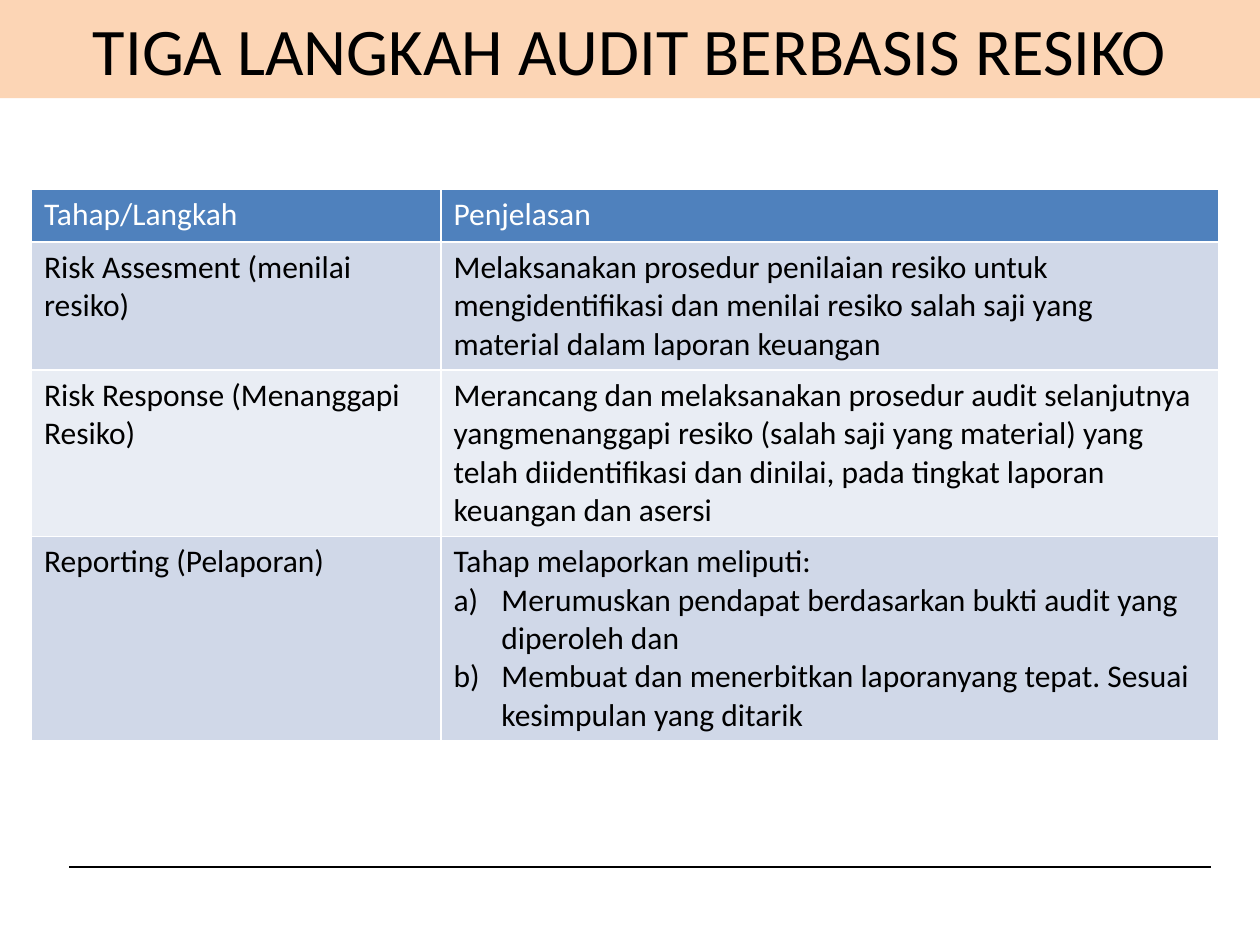
from lxml import etree
from pptx import Presentation
from pptx.dml.color import RGBColor
from pptx.enum.shapes import MSO_CONNECTOR, MSO_SHAPE
from pptx.enum.text import MSO_ANCHOR, PP_ALIGN
from pptx.oxml.ns import qn
from pptx.util import Inches, Pt

RECTANGLE = MSO_SHAPE.RECTANGLE
STRAIGHT = MSO_CONNECTOR.STRAIGHT
MIDDLE = MSO_ANCHOR.MIDDLE
CENTER = PP_ALIGN.CENTER

FONT = "Calibri"
COLORS = {
    "black": "000000",
    "white": "FFFFFF",
    "title": "FCD5B5",
    "header": "4F81BD",
    "odd": "D0D8E8",
    "even": "E9EDF4",
}
COLUMN_WIDTHS = (3.25, 6.17)
ROW_HEIGHT = 0.42

# Each cell is a list of paragraphs; those after the first are lettered.
ROWS = [
    (["Tahap/Langkah"], ["Penjelasan"]),
    (
        ["Risk Assesment (menilai resiko)"],
        ["Melaksanakan prosedur penilaian resiko untuk mengidentifikasi dan "
         "menilai resiko salah saji yang material dalam laporan keuangan"],
    ),
    (
        ["Risk Response (Menanggapi Resiko)"],
        ["Merancang dan melaksanakan prosedur audit selanjutnya "
         "yangmenanggapi resiko (salah saji yang material) yang telah "
         "diidentifikasi dan dinilai, pada tingkat laporan keuangan dan asersi"],
    ),
    (
        ["Reporting (Pelaporan)"],
        ["Tahap melaporkan meliputi:",
         "Merumuskan pendapat berdasarkan bukti audit yang diperoleh dan",
         "Membuat dan menerbitkan laporanyang tepat. Sesuai kesimpulan yang ditarik"],
    ),
]


def rgb(name):
    return RGBColor.from_string(COLORS[name])


def style_para(para, size, color):
    para.font.name = FONT
    para.font.size = Pt(size)
    para.font.color.rgb = rgb(color)


def add_letter(para):
    """Number the paragraph a), b), ... with a hanging indent."""
    props = para._p.get_or_add_pPr()
    props.set("marL", str(Inches(0.38)))
    props.set("indent", str(-Inches(0.38)))
    etree.SubElement(props, qn("a:buFont"), typeface="+mj-lt")
    etree.SubElement(props, qn("a:buAutoNum"), type="alphaLcParenR")


def add_borders(cell):
    """Draw white borders; call before filling, as lines precede the fill."""
    props = cell._tc.get_or_add_tcPr()
    for side in ("lnL", "lnR", "lnT", "lnB"):
        line = etree.SubElement(props, qn(f"a:{side}"), w=str(Pt(1)))
        fill = etree.SubElement(line, qn("a:solidFill"))
        etree.SubElement(fill, qn("a:srgbClr"), val=COLORS["white"])


def add_rule(page):
    rule = page.shapes.add_connector(
        STRAIGHT, Inches(0.55), Inches(6.88), Inches(9.61), Inches(6.88))
    rule.line.color.rgb = rgb("black")
    rule.line.width = Pt(1.5)
    etree.SubElement(rule._element.spPr, qn("a:effectLst"))


def add_title(page, text):
    box = page.shapes.add_shape(RECTANGLE, 0, 0, Inches(10), Inches(0.78))
    box.shadow.inherit = False
    box.fill.solid()
    box.fill.fore_color.rgb = rgb("title")
    box.line.fill.background()
    frame = box.text_frame
    frame.word_wrap = True
    frame.vertical_anchor = MIDDLE
    para = frame.paragraphs[0]
    para.text = text
    para.alignment = CENTER
    style_para(para, 38, "black")


def fill_cell(cell, texts, fill, color):
    add_borders(cell)
    cell.fill.solid()
    cell.fill.fore_color.rgb = rgb(fill)
    frame = cell.text_frame
    for index, text in enumerate(texts):
        para = frame.add_paragraph() if index else frame.paragraphs[0]
        para.text = text
        if index:
            add_letter(para)
        style_para(para, 18, color)


def add_steps_table(page):
    frame = page.shapes.add_table(
        len(ROWS), len(COLUMN_WIDTHS),
        Inches(0.25), Inches(1.5), Inches(9.42), Inches(4.32))
    table = frame.table
    for column, width in zip(table.columns, COLUMN_WIDTHS):
        column.width = Inches(width)
    for row_index, texts_by_cell in enumerate(ROWS):
        row = table.rows[row_index]
        row.height = Inches(ROW_HEIGHT)
        if row_index == 0:
            fill, color = "header", "white"
        else:
            fill, color = ("odd" if row_index % 2 else "even"), "black"
        for cell, texts in zip(row.cells, texts_by_cell):
            fill_cell(cell, texts, fill, color)
    frame.height = Inches(4.32)  # rows grow to fit their text


def main():
    deck = Presentation()
    deck.slide_width, deck.slide_height = Inches(10), Inches(7.5)
    page = deck.slides.add_slide(deck.slide_layouts[6])
    add_rule(page)
    add_title(page, "TIGA LANGKAH AUDIT BERBASIS RESIKO")
    add_steps_table(page)
    deck.save("out.pptx")


if __name__ == "__main__":
    main()
